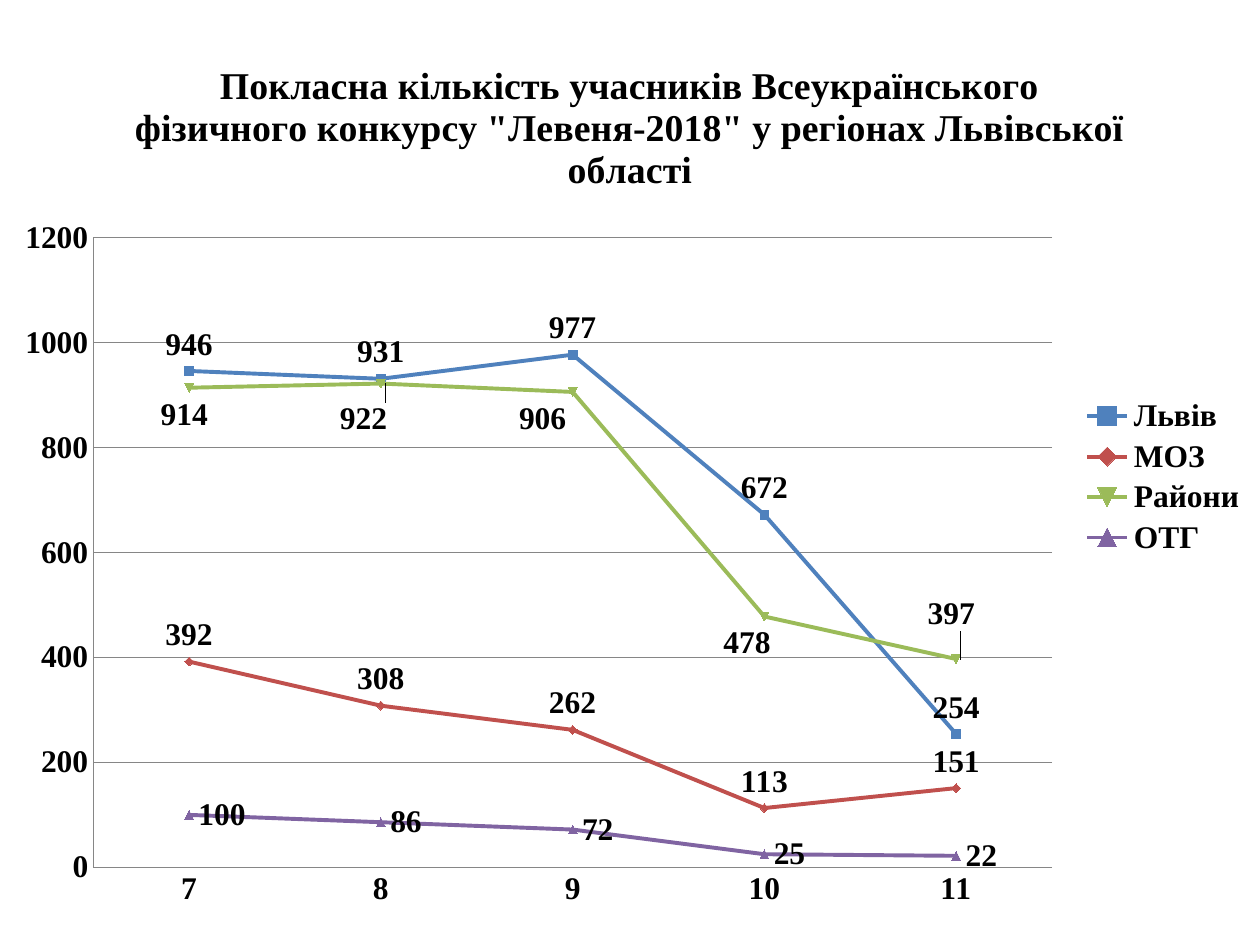
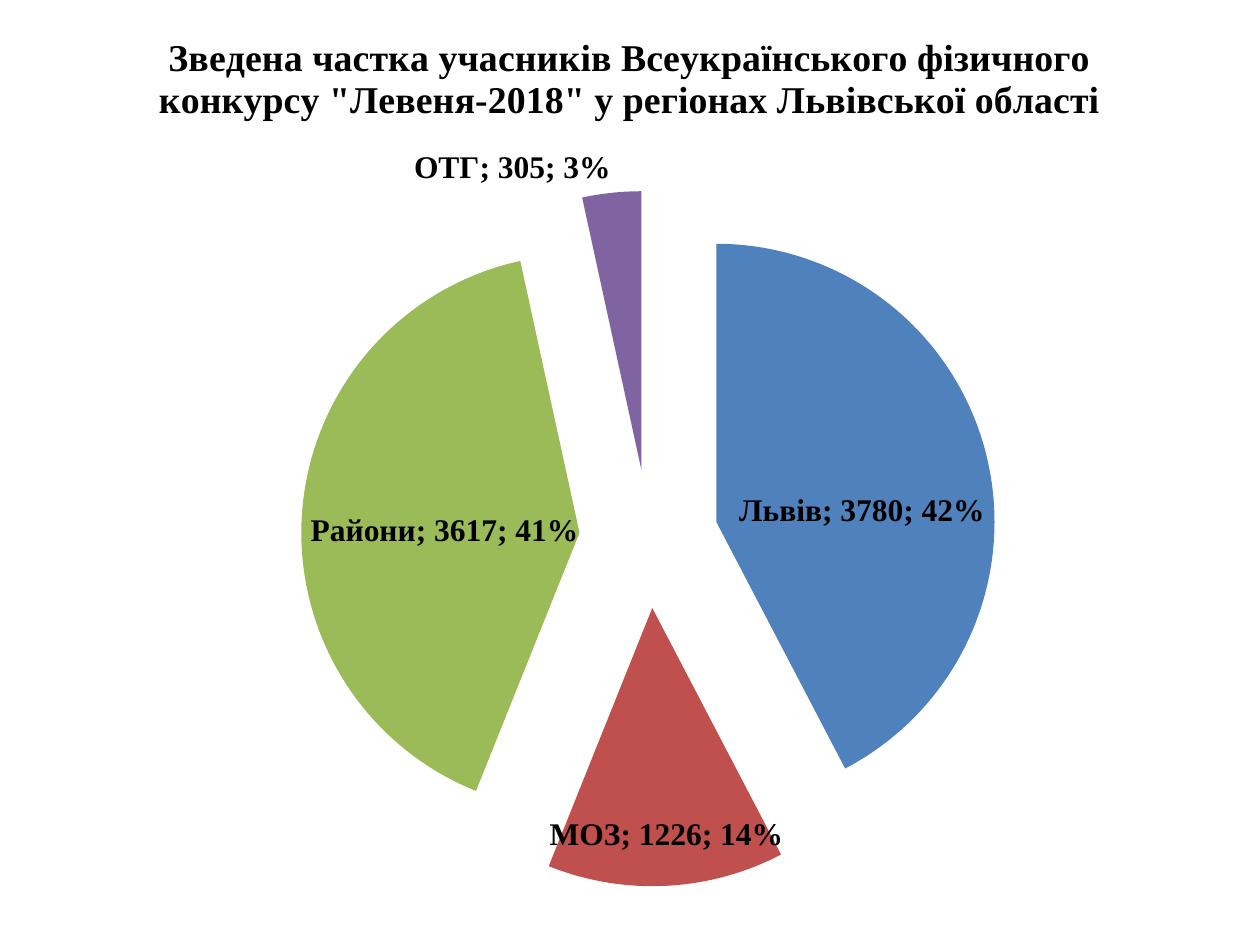
import pptx
import pptx.chart.data
import pptx.dml.color
import pptx.enum.chart
import pptx.oxml
import pptx.oxml.ns
import pptx.util
from pptx.util import Inches

FONT = "Times New Roman"
BLACK = "000000"
GRID_GREY = "868686"
REGION_COLORS = {"Львів": "4F81BD", "МОЗ": "C0504D", "Райони": "9BBB59", "ОТГ": "8064A2"}
GRADES = ["7", "8", "9", "10", "11"]
GRADE_COUNTS = {
    "Львів": [946, 931, 977, 672, 254],
    "МОЗ": [392, 308, 262, 113, 151],
    "Райони": [914, 922, 906, 478, 397],
    "ОТГ": [100, 86, 72, 25, 22],
}
REGION_TOTALS = [3780, 1226, 3617, 305]
DISTRICT_OFFSETS = [(-0.03, 0.03), (-0.04, 0.04), (-0.05, 0.03), (-0.04, 0.03), (-0.03, -0.05)]
CONTEST = 'Всеукраїнського фізичного конкурсу "Левеня-2018" у регіонах Львівської області'

Position = pptx.enum.chart.XL_LABEL_POSITION
ChartType = pptx.enum.chart.XL_CHART_TYPE
qn = pptx.oxml.ns.qn


def color(value):
    """Turn a hex string into a colour."""
    return pptx.dml.color.RGBColor.from_string(value)


def style_font(font, size=18):
    """Apply the shared bold lettering."""
    font.name = FONT
    font.size = pptx.util.Pt(size)
    font.bold = True
    font.color.rgb = color(BLACK)


def make_layout(**settings):
    """Build a manual chart layout from its settings."""
    namespace = pptx.oxml.ns.nsdecls("c")
    parts = "".join(f'<c:{name} val="{value}"/>' for name, value in settings.items())
    return pptx.oxml.parse_xml(
        f"<c:layout {namespace}><c:manualLayout>{parts}</c:manualLayout></c:layout>"
    )


def place_plot(chart, x, y, w, h):
    """Fix the inner plot area as fractions of the chart."""
    plot_area = chart._chartSpace.chart.plotArea
    for layout in plot_area.findall(qn("c:layout")):
        plot_area.remove(layout)
    plot_area.insert(
        0, make_layout(layoutTarget="inner", xMode="edge", yMode="edge", x=x, y=y, w=w, h=h)
    )


def move_label(series, index, position, x, y):
    """Shift one data label and return its element."""
    label = series.points[index].data_label
    style_font(label.font)
    label.position = position
    element = series._element.xpath(f"c:dLbls/c:dLbl[c:idx/@val='{index}']")[0]
    element.find(qn("c:idx")).addnext(make_layout(x=x, y=y))
    return element


def add_chart(slide, chart_type, categories, series_values, title, top, height):
    """Add a titled full-width chart."""
    data = pptx.chart.data.CategoryChartData()
    data.categories = categories
    for name, values in series_values.items():
        data.add_series(name, values)
    chart = slide.shapes.add_chart(
        chart_type, Inches(0), Inches(top), Inches(10), Inches(height), data
    ).chart
    style_font(chart.font)
    chart.has_title = True
    chart.chart_title.include_in_layout = False
    text_frame = chart.chart_title.text_frame
    text_frame.text = title
    style_font(text_frame.paragraphs[0].runs[0].font, 21.6)
    return chart


def style_axes(chart):
    """Format the axes and gridlines."""
    for axis in (chart.category_axis, chart.value_axis):
        axis.major_tick_mark = axis.minor_tick_mark = pptx.enum.chart.XL_TICK_MARK.NONE
        axis.format.line.color.rgb = color(GRID_GREY)
        style_font(axis.tick_labels.font)
    chart.category_axis.has_major_gridlines = False
    value_axis = chart.value_axis
    value_axis.minimum_scale, value_axis.maximum_scale = 0, 1200
    value_axis.major_unit = 200
    value_axis.has_major_gridlines = True
    value_axis.major_gridlines.format.line.color.rgb = color(GRID_GREY)


def add_grade_chart(slide):
    """Draw participants by grade as lines."""
    chart = add_chart(
        slide, ChartType.LINE_MARKERS, GRADES, GRADE_COUNTS,
        f"Покласна кількість учасників {CONTEST}", 0.23, 7.11,
    )
    place_plot(chart, 0.074, 0.233, 0.761, 0.703)
    style_axes(chart)
    chart.has_legend = True
    chart.legend.position = pptx.enum.chart.XL_LEGEND_POSITION.RIGHT
    chart.legend.include_in_layout = False
    style_font(chart.legend.font)
    for series in chart.plots[0].series:
        series.smooth = False
        series.format.line.width = pptx.util.Pt(2.25)
        series.format.line.color.rgb = color(REGION_COLORS[series.name])
        series.marker.format.fill.solid()
        series.marker.format.fill.fore_color.rgb = color(REGION_COLORS[series.name])
        labels = series.data_labels
        labels.show_value = True
        labels.position = Position.ABOVE if series.name in ("Львів", "МОЗ") else Position.RIGHT
        style_font(labels.font)
        if series.name == "Райони":
            for index, offset in enumerate(DISTRICT_OFFSETS):
                move_label(series, index, Position.RIGHT, *offset)


def show_share(element):
    """Show category, value and percentage in a label element."""
    for name in ("showVal", "showCatName", "showPercent"):
        element.find(qn(f"c:{name}")).set("val", "1")
    separator = pptx.oxml.parse_xml(
        f'<c:separator {pptx.oxml.ns.nsdecls("c")}>; </c:separator>'
    )
    element.find(qn("c:showBubbleSize")).addnext(separator)


def add_share_chart(slide):
    """Draw regional shares as an exploded pie."""
    chart = add_chart(
        slide, ChartType.PIE, list(REGION_COLORS), {"Series 1": REGION_TOTALS},
        f"Зведена частка учасників {CONTEST}", 0, 7.5,
    )
    place_plot(chart, 0.239, 0.202, 0.552, 0.736)
    chart.has_legend = False
    chart.plots[0].vary_by_categories = True
    series = chart.plots[0].series[0]
    explosion = pptx.oxml.parse_xml(f'<c:explosion {pptx.oxml.ns.nsdecls("c")} val="25"/>')
    series._element.find(qn("c:tx")).addnext(explosion)
    for index, region_color in enumerate(REGION_COLORS.values()):
        fill = series.points[index].format.fill
        fill.solid()
        fill.fore_color.rgb = color(region_color)
    labels = series.data_labels
    labels.position = Position.BEST_FIT
    style_font(labels.font)
    show_share(labels._element)
    show_share(move_label(series, 1, Position.BEST_FIT, 0, -0.08))


def main():
    """Build and save the presentation."""
    presentation = pptx.Presentation()
    presentation.slide_width, presentation.slide_height = Inches(10), Inches(7.5)
    blank_layout = presentation.slide_layouts[6]
    for add_content in (add_grade_chart, add_share_chart):
        add_content(presentation.slides.add_slide(blank_layout))
    presentation.save("out.pptx")


if __name__ == "__main__":
    main()
